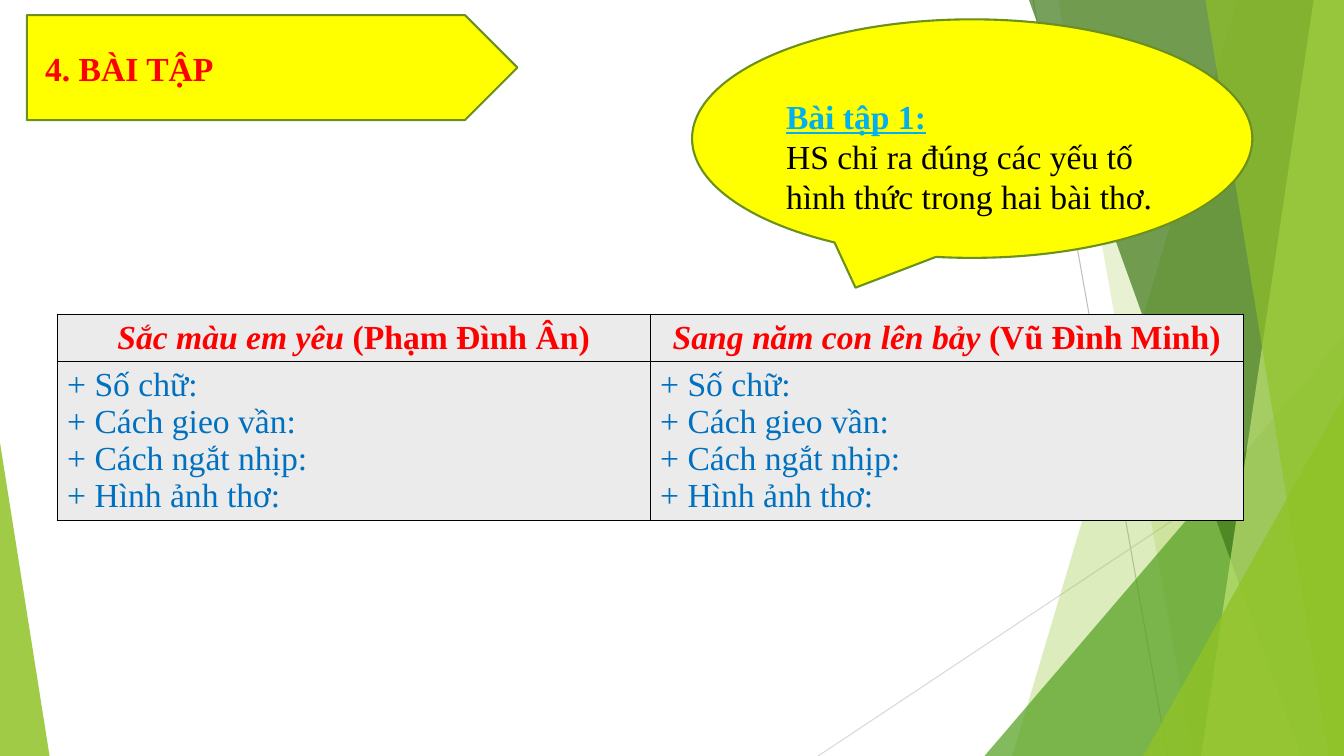
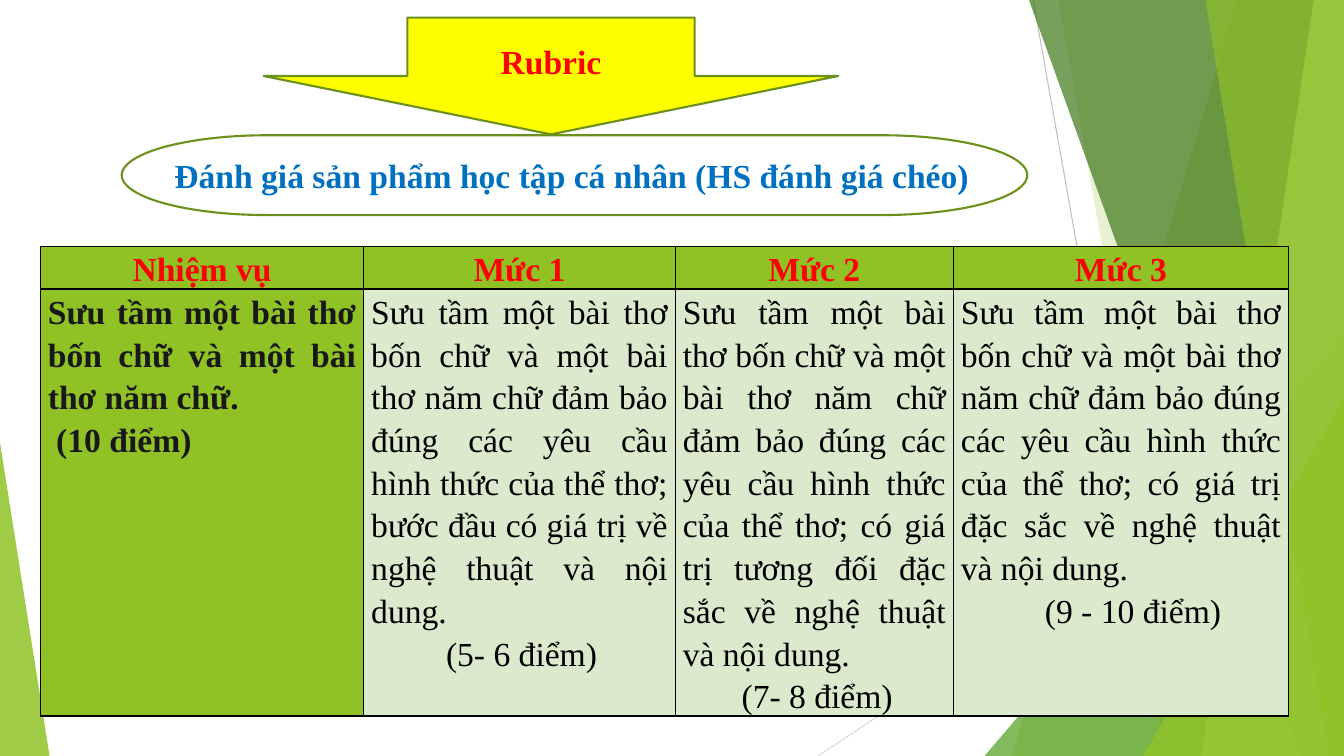
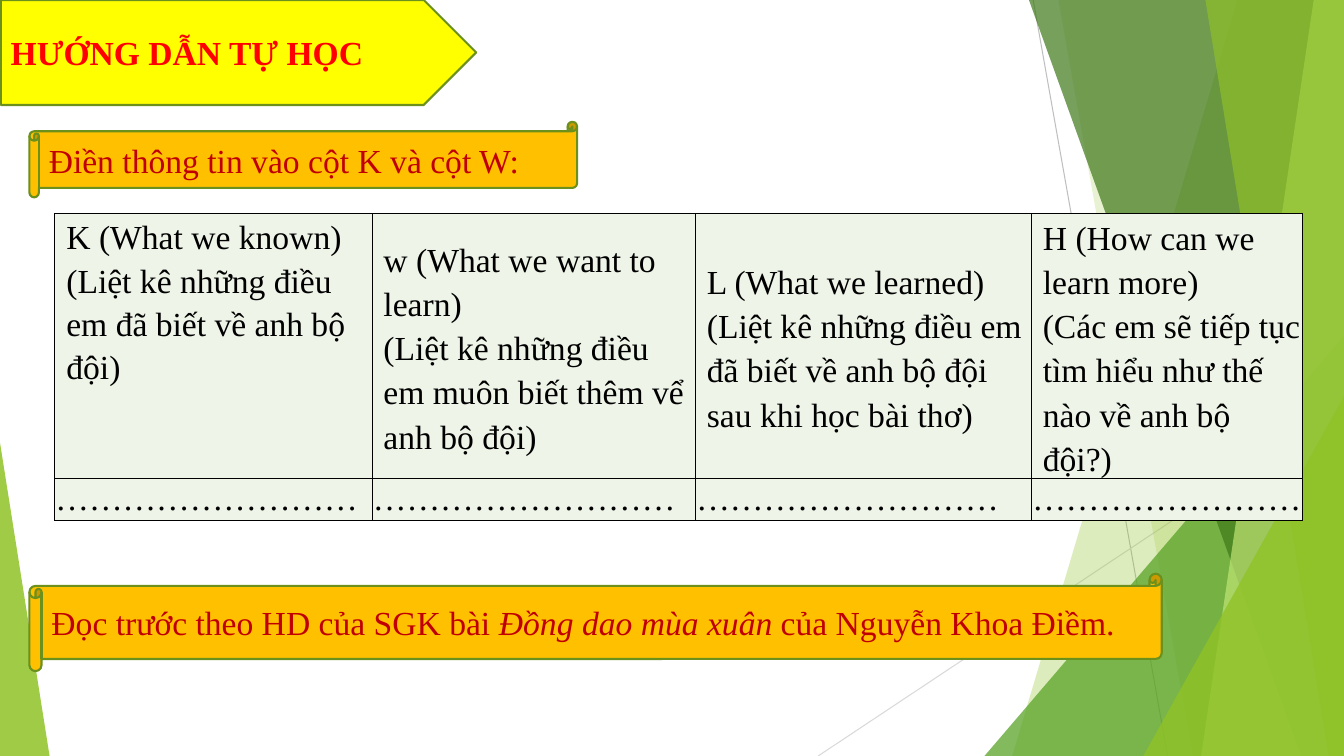
from dataclasses import dataclass
from typing import Any, NamedTuple

from lxml import etree
from pptx import Presentation
from pptx.dml.color import RGBColor
from pptx.enum.shapes import MSO_CONNECTOR, MSO_SHAPE
from pptx.enum.text import MSO_ANCHOR, PP_ALIGN
from pptx.oxml.ns import qn
from pptx.util import Emu, Inches, Pt

STRAIGHT = MSO_CONNECTOR.STRAIGHT
TRIANGLE = MSO_SHAPE.ISOSCELES_TRIANGLE
PENTAGON = MSO_SHAPE.PENTAGON
CALLOUT = MSO_SHAPE.OVAL_CALLOUT
DOWN_ARROW = MSO_SHAPE.DOWN_ARROW
TERMINATOR = MSO_SHAPE.FLOWCHART_TERMINATOR
SCROLL = MSO_SHAPE.HORIZONTAL_SCROLL
TOP, MIDDLE, BOTTOM = MSO_ANCHOR.TOP, MSO_ANCHOR.MIDDLE, MSO_ANCHOR.BOTTOM
LEFT, CENTER, JUSTIFY = PP_ALIGN.LEFT, PP_ALIGN.CENTER, PP_ALIGN.JUSTIFY

COLUMNS, ROWS = 160, 90
CELL = Inches(1) / 12
FONT = {"name": "Times New Roman", "size": Pt(24)}

RED, BLUE, SKY, CRIMSON = "FF0000", "0070C0", "00B0F0", "C00000"
BLACK, INK = "000000", "181818"
YELLOW, AMBER, OUTLINE = "FFFF00", "FFC000", "6B901C"
LIME, GRASS, FOREST, PALE_LIME = "90C226", "54A021", "3F7819", "C0E474"
GREY, SAGE, MINT = "EBEBEB", "DBE9CD", "EEF4E8"


class Box(NamedTuple):
    left: float
    top: float
    width: float
    height: float


class Ray(NamedTuple):
    start: tuple[float, float]
    end: tuple[float, float]
    color: str


class Panel(NamedTuple):
    top: float
    bottom: float
    color: str
    opacity: int


class Wedge(NamedTuple):
    box: Box
    apex: int
    color: str
    opacity: int


@dataclass(frozen=True)
class Span:
    text: str
    color: str = BLACK
    bold: bool = False
    italic: bool = False
    underline: bool = False


@dataclass(frozen=True)
class Para:
    spans: tuple[Span, ...]
    align: Any = LEFT
    spacing: float = 1.0
    before: float = 0
    indent: float = 0


@dataclass(frozen=True)
class Label:
    kind: Any
    box: Box
    fill: str | None
    paras: tuple[Para, ...] = ()


@dataclass(frozen=True)
class Entry:
    fill: str
    paras: tuple[Para, ...]
    anchor: Any = TOP


@dataclass(frozen=True)
class Sheet:
    left: float
    top: float
    widths: tuple[float, ...]
    heights: tuple[float, ...]
    entries: tuple[tuple[Entry, ...], ...]
    side: float
    edge: float = 0


RAYS = (
    Ray((123, 0), (139, ROWS), "BFBFBF"),
    Ray((COLUMNS, 48.4), (97.4, ROWS), "D9D9D9"),
)
FACETS = (
    Panel(147.3, 120.5, LIME, 30),
    Panel(126, 142, LIME, 20),
    Wedge(Box(117.2, 40, 42.8, 50), 1, GRASS, 72),
    Panel(122.5, 154.9, FOREST, 70),
    Panel(156.4, 143, PALE_LIME, 70),
    Panel(143.5, 158.2, LIME, 65),
    Wedge(Box(136.1, 47.2, 23.9, 42.8), 1, LIME, 80),
    Wedge(Box(0, 52.7, 5.9, 37.3), 0, LIME, 85),
)


def grid(cells: float) -> Emu:
    return Emu(round(cells * CELL))


def place(box: Box) -> list[Emu]:
    return [grid(value) for value in box]


def rgb(color: str) -> RGBColor:
    return RGBColor.from_string(color)


def apply(target: Any, formats: dict[str, Any]) -> None:
    for name, value in formats.items():
        setattr(target, name, value)


def paint(shape: Any, fill: str | None, line: str | None, opacity: int = 100) -> None:
    shape.shadow.inherit = False
    if fill is None:
        shape.fill.background()
    else:
        shape.fill.solid()
        shape.fill.fore_color.rgb = rgb(fill)
    if opacity < 100:
        color = shape.element.spPr.find(f"{qn('a:solidFill')}/{qn('a:srgbClr')}")
        etree.SubElement(color, qn("a:alpha"), val=str(opacity * 1000))
    if line is None:
        shape.line.fill.background()
    else:
        shape.line.color.rgb = rgb(line)
        shape.line.width = Pt(1.5)


def write(frame: Any, paras: tuple[Para, ...]) -> None:
    for index, item in enumerate(paras):
        para = frame.add_paragraph() if index else frame.paragraphs[0]
        apply(para, {"alignment": item.align, "line_spacing": item.spacing,
                     "space_before": Pt(item.before)})
        if item.indent:
            apply_indent(para, item.indent)
        for piece in item.spans:
            span = para.add_run()
            span.text = piece.text
            apply(span.font, FONT | {"bold": piece.bold, "italic": piece.italic,
                                     "underline": piece.underline})
            span.font.color.rgb = rgb(piece.color)


def apply_indent(para: Any, indent: float) -> None:
    properties = para._p.get_or_add_pPr()
    properties.set("marL", str(grid(indent)))
    properties.set("indent", "0")


def draw_ray(page: Any, ray: Ray) -> Any:
    ends = [grid(value) for value in (*ray.start, *ray.end)]
    line = page.shapes.add_connector(STRAIGHT, *ends)
    line.line.color.rgb = rgb(ray.color)
    line.line.width = Pt(0.75)
    etree.SubElement(line.element.spPr, qn("a:effectLst"))
    return line


def draw_facet(page: Any, facet: Panel | Wedge) -> Any:
    if isinstance(facet, Wedge):
        shape = page.shapes.add_shape(TRIANGLE, *place(facet.box))
        shape.adjustments[0] = facet.apex
    else:
        outline = page.shapes.build_freeform(grid(facet.top), 0)
        corners = ((COLUMNS, 0), (COLUMNS, ROWS), (facet.bottom, ROWS))
        outline.add_line_segments([(grid(x), grid(y)) for x, y in corners])
        shape = outline.convert_to_shape()
    paint(shape, facet.color, None, facet.opacity)
    return shape


def move_backdrop(page: Any, layout: Any) -> None:
    parts = [draw_ray(page, ray) for ray in RAYS]
    parts += [draw_facet(page, facet) for facet in FACETS]
    for part in parts:
        layout.shapes.element.append(part.element)


def draw_label(page: Any, label: Label) -> None:
    shape = page.shapes.add_shape(label.kind, *place(label.box))
    paint(shape, label.fill, OUTLINE)
    apply(shape.text_frame, {"word_wrap": True, "vertical_anchor": MIDDLE})
    write(shape.text_frame, label.paras)


def draw_text(page: Any, box: Box, paras: tuple[Para, ...]) -> None:
    frame = page.shapes.add_textbox(*place(box)).text_frame
    frame.word_wrap = True
    write(frame, paras)


def border(cell: Any) -> None:
    properties = cell._tc.get_or_add_tcPr()
    for index, side in enumerate(("a:lnL", "a:lnR", "a:lnT", "a:lnB")):
        line = etree.Element(qn(side), w=str(Pt(1)))
        fill = etree.SubElement(line, qn("a:solidFill"))
        etree.SubElement(fill, qn("a:srgbClr"), val=BLACK)
        properties.insert(index, line)


def draw_sheet(page: Any, sheet: Sheet) -> None:
    box = Box(sheet.left, sheet.top, sum(sheet.widths), sum(sheet.heights))
    table = page.shapes.add_table(
        len(sheet.heights), len(sheet.widths), *place(box)).table
    apply(table, {"first_row": False, "horz_banding": False})
    for column, width in zip(table.columns, sheet.widths):
        column.width = grid(width)
    for row, height, entries in zip(table.rows, sheet.heights, sheet.entries):
        row.height = grid(height)
        for cell, entry in zip(row.cells, entries):
            apply(cell, {"margin_left": grid(sheet.side), "margin_right": grid(sheet.side),
                         "margin_top": grid(sheet.edge), "margin_bottom": grid(sheet.edge),
                         "vertical_anchor": entry.anchor})
            cell.fill.solid()
            cell.fill.fore_color.rgb = rgb(entry.fill)
            border(cell)
            write(cell.text_frame, entry.paras)


def plain(text: str, color: str = BLACK, bold: bool = False, **layout: Any) -> Para:
    return Para((Span(text, color, bold),), **layout)


def build_exercise(page: Any) -> None:
    draw_label(page, Label(PENTAGON, Box(3.2, 1.8, 58.4, 12.5), YELLOW,
                           (plain(" 4. BÀI TẬP", RED, True),)))
    poems = (("Sắc màu em yêu", " (Phạm Đình Ân)"),
             ("Sang năm con lên bảy", " (Vũ Đình Minh)"))
    features = ("+ Số chữ:", "+ Cách gieo vần:", "+ Cách ngắt nhịp:", "+ Hình ảnh thơ:")
    heads = tuple(
        Entry(GREY, (Para((Span(title, RED, True, True), Span(poet, RED, True)), CENTER),))
        for title, poet in poems)
    body = Entry(GREY, tuple(plain(feature, BLUE) for feature in features))
    draw_sheet(page, Sheet(6.8, 37.4, (70.6,) * 2, (5.6, 18.8),
                           (heads, (body,) * 2), 1.2, 0.6))
    draw_label(page, Label(CALLOUT, Box(82.4, 2.3, 66.7, 28.4), YELLOW))
    draw_text(page, Box(92.4, 10.8, 48.7, 15.7), (
        Para((Span("Bài tập 1:", SKY, True, underline=True),)),
        plain("HS chỉ ra đúng các yếu tố hình thức trong hai bài thơ."),
    ))


def build_rubric(page: Any) -> None:
    draw_label(page, Label(DOWN_ARROW, Box(31.4, 2.1, 68.4, 13.9), YELLOW,
                           (plain("Rubric", RED, True, align=CENTER),)))
    draw_label(page, Label(
        TERMINATOR, Box(14.5, 16.1, 107.8, 9.5), None,
        (plain("Đánh giá sản phẩm học tập cá nhân (HS đánh giá chéo)", BLUE, True),)))
    task = "Sưu tầm một bài thơ bốn chữ và một bài thơ năm chữ"
    standard = "đảm bảo đúng các yêu cầu hình thức của thể thơ;"
    levels = (
        ("bước đầu có giá trị về nghệ thuật và nội dung.", "(5- 6 điểm)", 8.9),
        ("có giá trị tương đối đặc sắc về nghệ thuật và nội dung.", "(7- 8 điểm)", 7),
        ("có giá trị đặc sắc về nghệ thuật và nội dung.", "(9 - 10 điểm)", 10),
    )
    block = {"align": JUSTIFY, "spacing": 1.15}
    heads = tuple(
        Entry(LIME, (plain(name, RED, True, align=CENTER, spacing=1.15),))
        for name in ("Nhiệm vụ", "Mức 1", "Mức 2", "Mức 3"))
    duty = Entry(LIME, (plain(f"{task}.", INK, True, **block),
                        plain(" (10 điểm)", INK, True, **block)))
    grades = tuple(
        Entry(SAGE, (plain(f"{task} {standard} {quality}", **block),
                     plain(score, indent=indent, **block)))
        for quality, score, indent in levels)
    draw_sheet(page, Sheet(4.8, 29.3, (38.5, 37.1, 33.1, 39.9), (5.1, 50.7),
                           (heads, (duty, *grades)), 0.9))


def build_self_study(page: Any) -> None:
    draw_label(page, Label(PENTAGON, Box(0.1, 0, 56.6, 12.5), YELLOW,
                           (plain("HƯỚNG DẪN TỰ HỌC", RED, True),)))
    draw_label(page, Label(SCROLL, Box(3.5, 14.5, 65.2, 9), AMBER,
                           (plain("Điền thông tin vào cột K và cột W:", CRIMSON),)))
    block = {"indent": 1.25, "spacing": 1.19}
    questions = (
        Entry(MINT, (plain("K (What we known) (Liệt kê những điều em đã biết về anh bộ đội)",
                           indent=1.3, spacing=1.17, before=13),)),
        Entry(MINT, (plain("w (What we want to learn)", **block),
                     plain("(Liệt kê những điều em muôn biết thêm vể anh bộ đội)", **block)),
              MIDDLE),
        Entry(MINT, (plain("L (What we learned) (Liệt kê những điều em đã biết "
                           "về anh bộ đội sau khi học bài thơ)", **block),), MIDDLE),
        Entry(MINT, (plain("H (How can we learn more)", **block),
                     plain("(Các em sẽ tiếp tục tìm hiểu như thế nào về anh bộ đội?)",
                           **block)), BOTTOM),
    )
    blanks = tuple(Entry(MINT, (plain("…" * count, spacing=1.07),))
                   for count in (9, 9, 9, 8))
    draw_sheet(page, Sheet(6.5, 25.4, (37.8, 38.5, 40, 32.3), (31.5, 5),
                           (questions, blanks), 0.1))
    reading = Para((Span("Đọc trước theo HD của SGK bài ", CRIMSON),
                    Span("Đồng dao mùa xuân", CRIMSON, italic=True),
                    Span(" của Nguyễn Khoa Điềm.", CRIMSON)))
    draw_label(page, Label(SCROLL, Box(3.5, 68.3, 134.8, 11.6), AMBER, (reading,)))


def main() -> None:
    deck = Presentation()
    apply(deck, {"slide_width": grid(COLUMNS), "slide_height": grid(ROWS)})
    blank = deck.slide_layouts[6]
    for index, build in enumerate((build_exercise, build_rubric, build_self_study)):
        page = deck.slides.add_slide(blank)
        if index == 0:
            move_backdrop(page, blank)
        build(page)
    deck.save("out.pptx")


if __name__ == "__main__":
    main()
